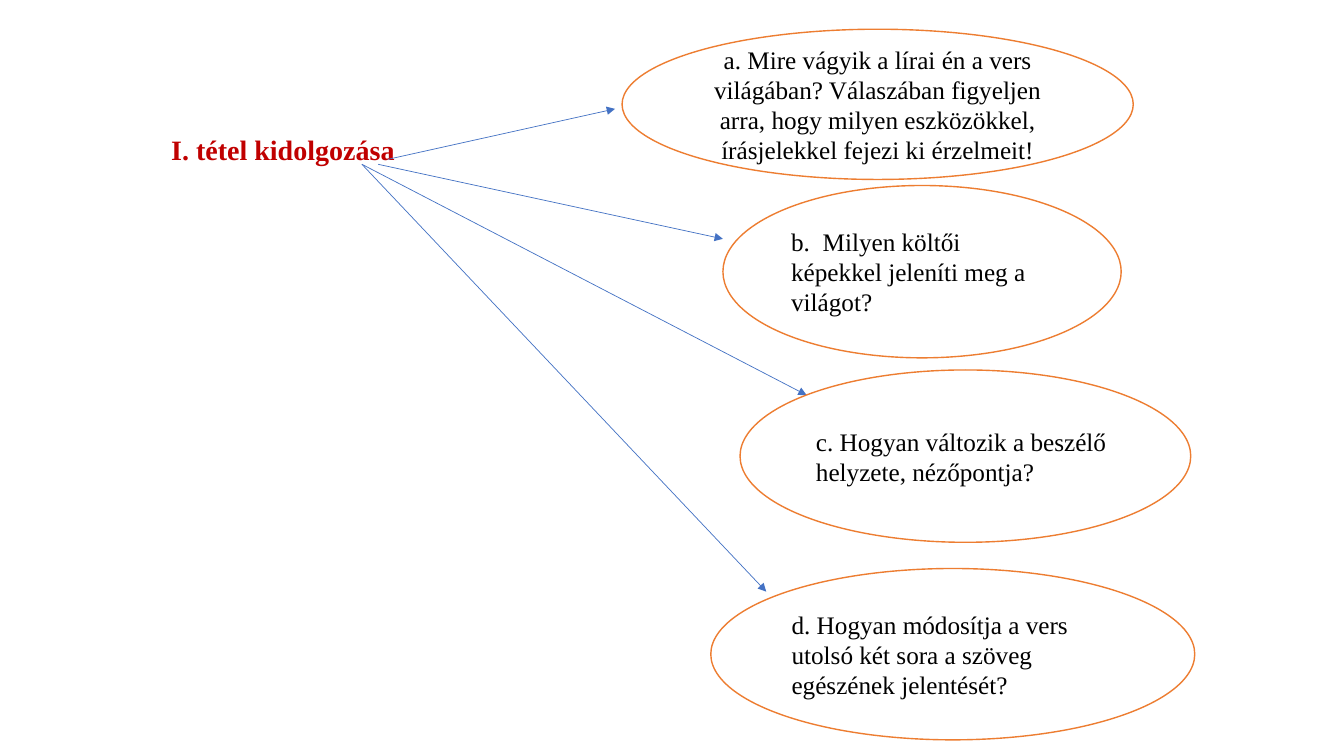
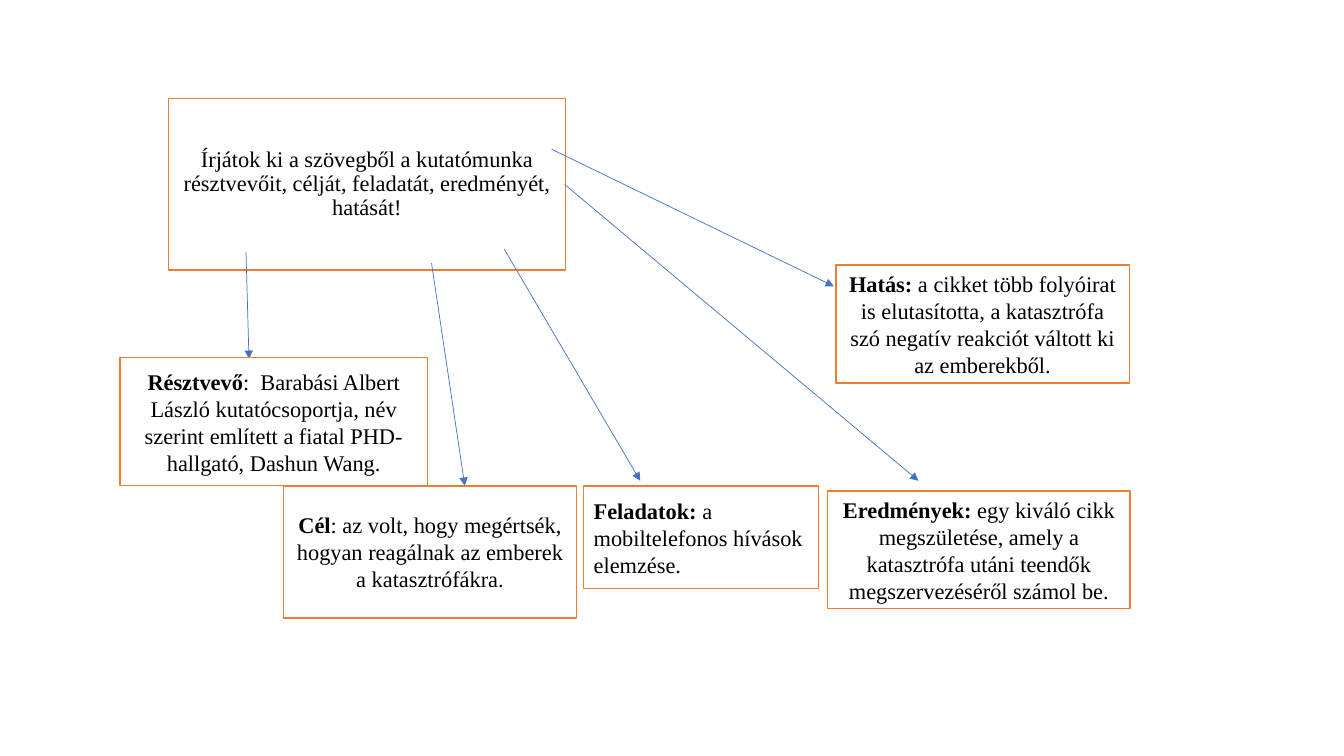
from lxml.etree import SubElement
from pptx import Presentation
from pptx.dml.color import RGBColor
from pptx.enum.shapes import MSO_CONNECTOR, MSO_SHAPE
from pptx.enum.text import MSO_ANCHOR, PP_ALIGN
from pptx.oxml.ns import qn
from pptx.util import Emu, Pt

PX = 9144


def px(n):
    return Emu(n * PX)


def rgb(value):
    return RGBColor.from_string(value)


class Deck:
    FONT = "Times New Roman"
    WHITE = "FFFFFF"
    BLACK = "000000"
    RED = "C00000"
    ORANGE = "ED7D31"
    BLUE = "4472C4"

    def __init__(self):
        self.prs = Presentation()
        self.prs.slide_width = px(1333)
        self.prs.slide_height = px(750)
        self.s = None

    def slide(self):
        self.s = self.prs.slides.add_slide(self.prs.slide_layouts[6])

    def label(self, sp, runs, size, color=BLACK, align=PP_ALIGN.CENTER,
              anchor=MSO_ANCHOR.MIDDLE, spacing=None):
        tf = sp.text_frame
        tf.word_wrap = True
        tf.vertical_anchor = anchor
        p = tf.paragraphs[0]
        p.alignment = align
        if spacing:
            p.line_spacing = spacing
        for text, bold in runs:
            r = p.add_run()
            r.text = text
            r.font.name = self.FONT
            r.font.size = Pt(size)
            r.font.bold = bold
            r.font.color.rgb = rgb(color)

    def title(self, text, box):
        sp = self.s.shapes.add_textbox(*map(px, box))
        self.label(sp, [(text, True)], 20, self.RED, PP_ALIGN.LEFT,
                   MSO_ANCHOR.BOTTOM, 0.9)

    def bubble(self, kind, box, runs, size, align=PP_ALIGN.CENTER, spacing=None):
        sp = self.s.shapes.add_shape(kind, *map(px, box))
        sp.shadow.inherit = False
        sp.fill.solid()
        sp.fill.fore_color.rgb = rgb(self.WHITE)
        sp.line.color.rgb = rgb(self.ORANGE)
        sp.line.width = Pt(1)
        self.label(sp, runs, size, align=align, spacing=spacing)

    def arrow(self, *ends):
        cn = self.s.shapes.add_connector(MSO_CONNECTOR.STRAIGHT, *map(px, ends))
        cn.line.color.rgb = rgb(self.BLUE)
        cn.line.width = Pt(0.5)
        pr = cn._element.spPr
        SubElement(pr.get_or_add_ln(), qn("a:tailEnd"), type="triangle")
        SubElement(pr, qn("a:effectLst"))


def questions(deck):
    deck.slide()
    deck.title("I. tétel kidolgozása", (160, 29, 1006, 141))
    for ends in [
        (359, 163, 760, 587),
        (359, 163, 800, 392),
        (375, 163, 717, 237),
        (385, 158, 610, 108),
    ]:
        deck.arrow(*ends)
    for box, align, text in [
        ((617, 29, 507, 149), PP_ALIGN.CENTER,
         "a. Mire vágyik a lírai én a vers világában? Válaszában figyeljen arra, "
         "hogy milyen eszközökkel, írásjelekkel fejezi ki érzelmeit!"),
        ((717, 184, 395, 171), PP_ALIGN.LEFT,
         "b.  Milyen költői képekkel jeleníti meg a világot?"),
        ((734, 367, 447, 171), PP_ALIGN.LEFT,
         "c. Hogyan változik a beszélő helyzete, nézőpontja?"),
        ((705, 564, 480, 170), PP_ALIGN.LEFT,
         "d. Hogyan módosítja a vers utolsó két sora a szöveg egészének jelentését?"),
    ]:
        deck.bubble(MSO_SHAPE.OVAL, box, [(text, False)], 18, align)


def research(deck):
    deck.slide()
    task = ("Írjátok ki a szövegből a kutatómunka résztvevőit, célját, "
            "feladatát, eredményét, hatását!")
    deck.bubble(MSO_SHAPE.RECTANGLE, (167, 98, 394, 170), [(task, False)], 16,
                spacing=0.9)
    for ends in [
        (244, 250, 247, 356),
        (428, 261, 461, 482),
        (500, 247, 635, 477),
        (560, 183, 911, 477),
        (547, 148, 827, 284),
    ]:
        deck.arrow(*ends)
    for box, align, heading, text in [
        ((119, 355, 305, 127), PP_ALIGN.CENTER, "Résztvevő",
         ":  Barabási Albert László kutatócsoportja, név szerint említett "
         "a fiatal PHD-hallgató, Dashun Wang."),
        ((281, 482, 291, 131), PP_ALIGN.CENTER, "Cél",
         ": az volt, hogy megértsék, hogyan reagálnak az emberek a katasztrófákra."),
        ((579, 482, 233, 102), PP_ALIGN.LEFT, "Feladatok:",
         " a mobiltelefonos hívások elemzése."),
        ((821, 487, 300, 117), PP_ALIGN.CENTER, "Eredmények:",
         " egy kiváló cikk megszületése, amely a katasztrófa utáni teendők "
         "megszervezéséről számol be."),
        ((829, 263, 291, 117), PP_ALIGN.CENTER, "Hatás:",
         " a cikket több folyóirat is elutasította, a katasztrófa szó negatív "
         "reakciót váltott ki az emberekből."),
    ]:
        deck.bubble(MSO_SHAPE.RECTANGLE, box, [(heading, True), (text, False)], 16, align)


def main():
    deck = Deck()
    questions(deck)
    research(deck)
    deck.prs.save("out.pptx")


if __name__ == "__main__":
    main()
